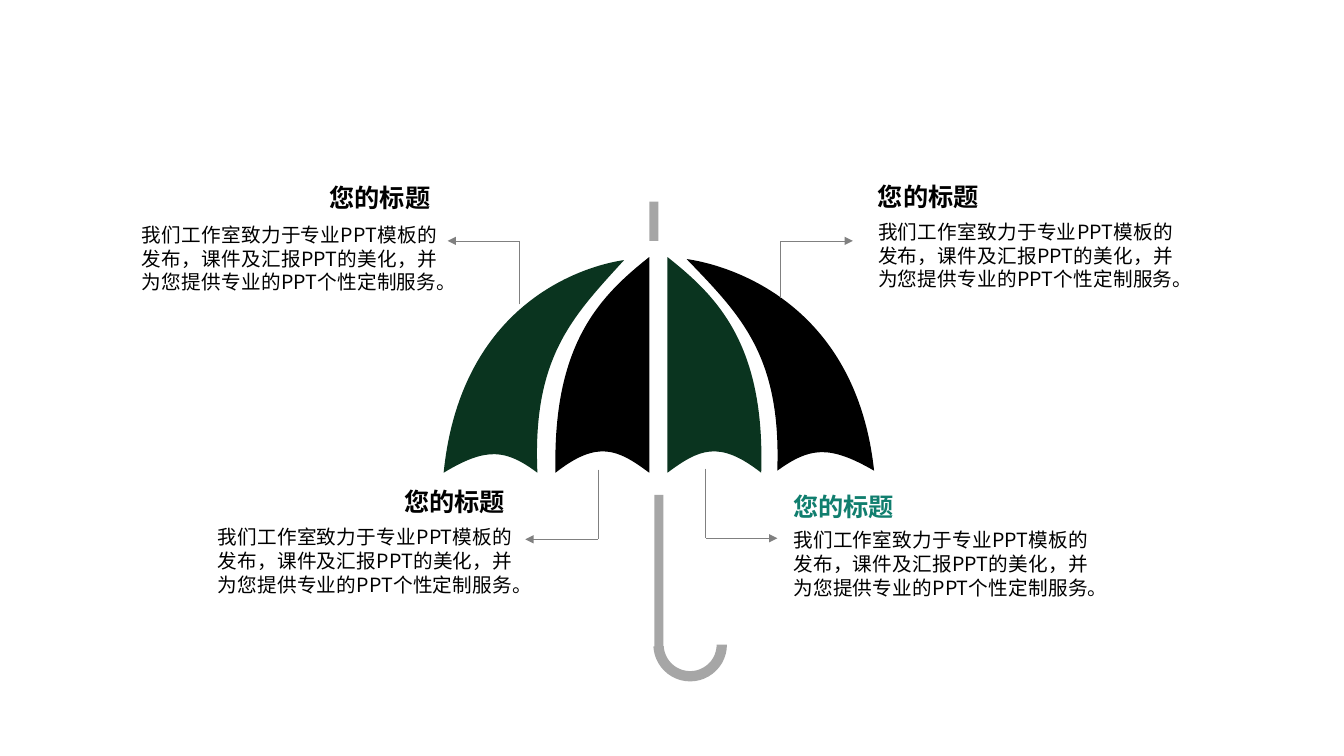
"""Build a slide with a four-panel umbrella and a callout for each panel."""
from dataclasses import dataclass

from lxml import etree
from pptx import Presentation
from pptx import util as u
from pptx.dml.color import RGBColor
from pptx.enum import shapes, text
from pptx.oxml import ns
from pptx.shapes.base import BaseShape
from pptx.shapes.group import GroupShape
from pptx.slide import Slide

Point = tuple[float, float]
Segment = tuple[Point, ...]


@dataclass(frozen=True)
class Theme:
    """Colours, font and type sizes of the slide."""
    green: str = "0A341F"
    black: str = "000000"
    teal: str = "107E6E"
    handle: str = "A6A6A6"
    arrow: str = "808080"
    font: str = "Noto Sans CJK SC"
    title_size: int = 18
    body_size: int = 14
    line_spacing: float = 1.21
    arrow_width: float = 0.5


THEME = Theme()
TITLE = "您的标题"
BODY = "我们工作室致力于专业PPT模板的发布，课件及汇报PPT的美化，并为您提供专业的PPT个性定制服务。"


@dataclass(frozen=True)
class Panel:
    """An umbrella panel: a closed run of lines (one point) and curves (three)."""
    color: str
    segments: tuple[Segment, ...]


@dataclass(frozen=True)
class Callout:
    """A title, a paragraph, and an elbow arrow from a panel to them."""
    title: Point
    body: Point
    stem: Point
    tip: Point
    title_color: str = THEME.black


PANELS = [
    Panel(THEME.green, (((5.28, 3.55), (5.67, 3.15), (6.19, 2.58)),
                        ((5.78, 2.64), (4.57, 3.01), (4.4, 4.69)),
                        ((4.83, 4.43), (5.02, 4.46), (5.33, 4.69)))),
    Panel(THEME.black, (((6.44, 2.55),),
                        ((5.95, 2.94), (5.48, 3.41), (5.51, 4.69)),
                        ((5.93, 4.36), (6.13, 4.46), (6.44, 4.69)))),
    Panel(THEME.green, (((6.62, 2.55),),
                        ((7.11, 2.94), (7.59, 3.41), (7.55, 4.69)),
                        ((7.13, 4.36), (6.93, 4.46), (6.62, 4.69)))),
    Panel(THEME.black, (((7.75, 3.53), (7.35, 3.13), (6.81, 2.57)),
                        ((7.23, 2.63), (8.49, 3), (8.67, 4.67)),
                        ((8.22, 4.41), (8.03, 4.44), (7.71, 4.67)))),
]

CALLOUTS = [
    Callout((3.17, 1.76), (1.31, 2.16), (5.15, 3.02), (4.44, 2.39)),
    Callout((3.91, 4.77), (2.06, 5.16), (5.93, 4.66), (5.21, 5.35)),
    Callout((8.61, 1.75), (8.61, 2.13), (7.74, 2.96), (8.46, 2.39)),
    Callout((7.77, 4.82), (7.77, 5.19), (7, 4.65), (7.71, 5.34), THEME.teal),
]


def paint(shape: BaseShape, color: str) -> None:
    """Give a shape a flat fill with no line or shadow."""
    shape.shadow.inherit = False
    shape.fill.solid()
    shape.fill.fore_color.rgb = RGBColor.from_string(color)
    shape.line.fill.background()


def add_panel(slide: Slide, panel: Panel) -> None:
    """Draw one umbrella panel, turning its curved sides into Bézier curves."""
    corners = [tuple(map(u.Inches, segment[-1])) for segment in panel.segments]
    builder = slide.shapes.build_freeform(*corners[-1])
    builder.add_line_segments(corners)
    shape = builder.convert_to_shape()
    sides = list(shape._element.spPr.iter(ns.qn("a:lnTo")))
    for side, segment in zip(sides, panel.segments):
        if len(segment) == 3:
            curve = etree.Element(ns.qn("a:cubicBezTo"))
            for x, y in segment:
                etree.SubElement(curve, ns.qn("a:pt"),
                                 x=str(u.Inches(x) - shape.left),
                                 y=str(u.Inches(y) - shape.top))
            side.getparent().replace(side, curve)
    paint(shape, panel.color)


def add_handle(slide: Slide) -> None:
    """Draw the tip, and the shaft grouped with its hook."""
    rectangle = shapes.MSO_SHAPE.RECTANGLE
    tip = slide.shapes.add_shape(rectangle, *map(u.Inches, (6.44, 2, 0.09, 0.39)))
    group = slide.shapes.add_group_shape()
    shaft = group.shapes.add_shape(
        rectangle, *map(u.Inches, (6.49, 4.91, 0.09, 1.52)))
    hook = group.shapes.add_shape(
        shapes.MSO_SHAPE.BLOCK_ARC, *map(u.Inches, (6.48, 6.03, 0.73, 0.73)))
    hook.rotation = 180
    for index, value in enumerate((108, 214.22, 0.14)):
        hook.adjustments[index] = value
    for shape in (tip, shaft, hook):
        paint(shape, THEME.handle)


def add_line(group: GroupShape, start: Point, end: Point, arrow: bool) -> None:
    """Draw a thin line, with an arrowhead at its end if asked."""
    connector = group.shapes.add_connector(
        shapes.MSO_CONNECTOR.STRAIGHT, *map(u.Inches, (*start, *end)))
    connector.line.color.rgb = RGBColor.from_string(THEME.arrow)
    connector.line.width = u.Pt(THEME.arrow_width)
    properties = connector._element.spPr
    if arrow:
        line = properties.find(ns.qn("a:ln"))
        etree.SubElement(line, ns.qn("a:tailEnd"), type="triangle")
    etree.SubElement(properties, ns.qn("a:effectLst"))


def add_text(group: GroupShape, words: str, position: Point, extent: Point,
             size: int, color: str, title: bool) -> None:
    """Add a wrapped text box in the slide's font."""
    shape = group.shapes.add_textbox(*map(u.Inches, (*position, *extent)))
    frame = shape.text_frame
    frame.word_wrap = True
    frame.auto_size = text.MSO_AUTO_SIZE.SHAPE_TO_FIT_TEXT
    paragraph = frame.paragraphs[0]
    paragraph.alignment = text.PP_ALIGN.LEFT if title else text.PP_ALIGN.JUSTIFY
    paragraph.line_spacing = u.Pt(size * THEME.line_spacing)
    run = paragraph.add_run()
    run.text = words
    run.font.size = u.Pt(size)
    run.font.bold = title
    run.font.color.rgb = RGBColor.from_string(color)
    run.font.name = THEME.font
    etree.SubElement(run.font._element, ns.qn("a:ea"), typeface=THEME.font)


def add_elbow(slide: Slide, callout: Callout) -> None:
    """Draw the elbow arrow of one callout."""
    group = slide.shapes.add_group_shape()
    corner = (callout.stem[0], callout.tip[1])
    add_line(group, callout.stem, corner, arrow=False)
    add_line(group, corner, callout.tip, arrow=True)


def add_words(slide: Slide, callout: Callout) -> None:
    """Write the paragraph and the title of one callout."""
    group = slide.shapes.add_group_shape()
    add_text(group, BODY, callout.body, (3.12, 0.81),
             THEME.body_size, THEME.black, title=False)
    add_text(group, TITLE, callout.title, (1.34, 0.4),
             THEME.title_size, callout.title_color, title=True)


def main() -> None:
    """Build and save the presentation."""
    presentation = Presentation()
    presentation.slide_width = u.Inches(13.33)
    presentation.slide_height = u.Inches(7.5)
    slide = presentation.slides.add_slide(presentation.slide_layouts[6])
    for panel in PANELS:
        add_panel(slide, panel)
    add_handle(slide)
    for callout in CALLOUTS:
        add_elbow(slide, callout)
    for callout in CALLOUTS:
        add_words(slide, callout)
    presentation.save("out.pptx")


if __name__ == "__main__":
    main()
